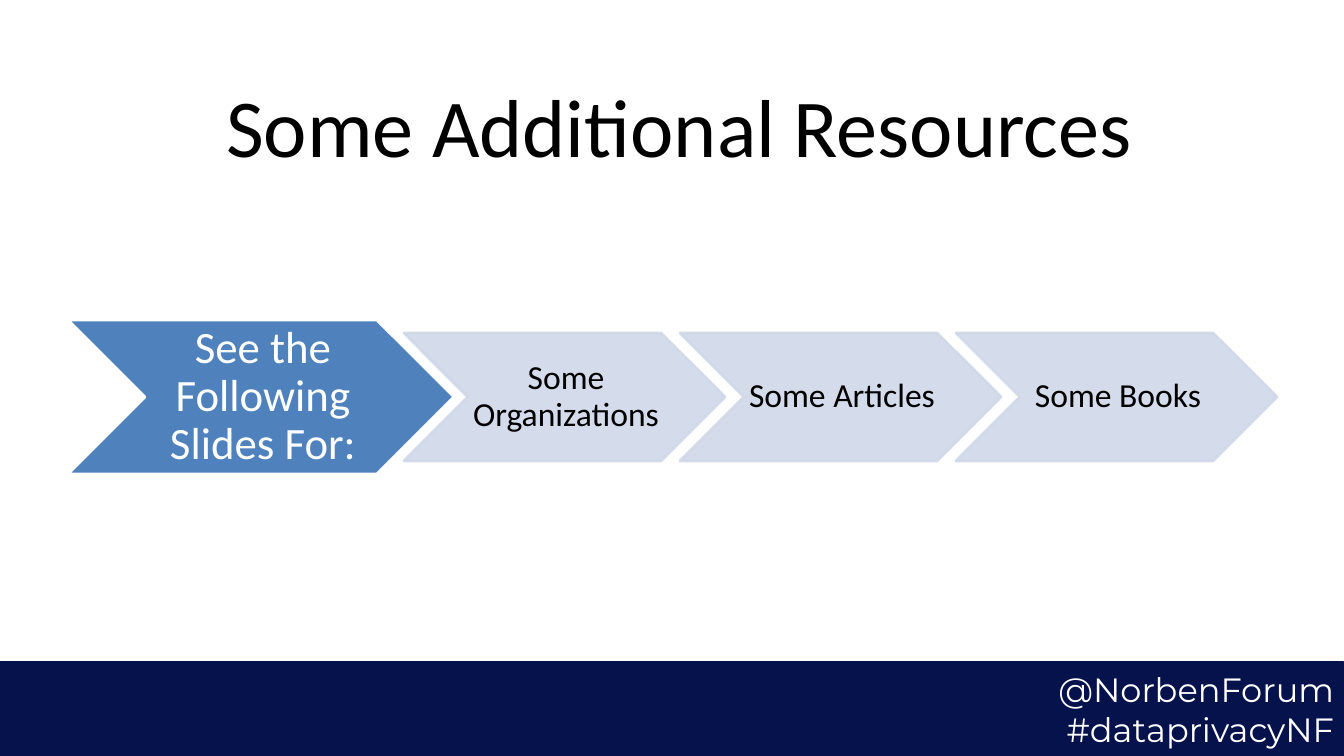
from lxml import etree
from pptx import Presentation
from pptx.dml.color import RGBColor
from pptx.enum.shapes import MSO_SHAPE
from pptx.enum.text import MSO_ANCHOR, MSO_AUTO_SIZE, PP_ALIGN
from pptx.oxml.ns import qn
from pptx.util import Emu, Pt

RECT, CHEVRON = MSO_SHAPE.RECTANGLE, MSO_SHAPE.CHEVRON
MIDDLE, NO_FIT = MSO_ANCHOR.MIDDLE, MSO_AUTO_SIZE.NONE
CENTER, RIGHT = PP_ALIGN.CENTER, PP_ALIGN.RIGHT

TITLE = "Some Additional Resources"
LEAD = "See the Following Slides For:"
STEPS = ["Some Organizations", "Some Articles", "Some Books"]
TAGS = ["@NorbenForum", "#dataprivacyNF"]

WIDE, HIGH = 1344, 756
TITLE_BOX = (14, 0, 1330, 249)
BAND_BOX = (0, 662, WIDE, HIGH - 662)
LEAD_BOX = (68, 320, 386, 154)
STEP_BOX = (404, 333, 321, 128)
PITCH = 276

NAVY, BLUE, PALE = "05124C", "4F81BD", "D0D8E8"
WHITE, BLACK = "FFFFFF", "000000"

TITLE_TEXT = {"size": 58.7, "name": "Calibri", "color": BLACK, "align": CENTER}
LEAD_TEXT = {"size": 32, "name": "Calibri", "color": WHITE, "align": CENTER,
             "spacing": 0.9, "inset": (4, 2, 0, 2)}
STEP_TEXT = {**LEAD_TEXT, "size": 24, "color": BLACK, "inset": (3, 2, 0, 2)}
TAG_TEXT = {"size": 24, "name": "Montserrat", "color": WHITE, "align": RIGHT}


def px(n):
    return Emu(round(n * 914400 / 100.8))


def rgb(code):
    return RGBColor.from_string(code)


def place(shape, box):
    for key, n in zip(("left", "top", "width", "height"), box):
        setattr(shape, key, px(n))


def write(shape, lines, look):
    frame = shape.text_frame
    inset = look.get("inset", (10, 5, 10, 5))
    form = {"word_wrap": True, "auto_size": NO_FIT, "vertical_anchor": MIDDLE}
    for side, n in zip(("left", "top", "right", "bottom"), inset):
        form["margin_" + side] = px(n)
    for key, value in form.items():
        setattr(frame, key, value)
    frame.text = "\n".join(lines)
    for para in frame.paragraphs:
        para.alignment = look["align"]
        para.line_spacing = look.get("spacing", 1.0)
        font = {"size": Pt(look["size"]), "name": look["name"], "bold": False}
        for key, value in font.items():
            setattr(para.font, key, value)
        para.font.color.rgb = rgb(look["color"])


def draw(slide, kind, box, fill, line, weight, lines, look, alpha=100):
    shape = slide.shapes.add_shape(kind, *map(px, box))
    shape.shadow.inherit = False
    shape.fill.solid()
    shape.fill.fore_color.rgb = rgb(fill)
    shape.line.color.rgb = rgb(line)
    shape.line.width = Pt(weight)
    if alpha < 100:
        for tint in shape.element.spPr.iter(qn("a:srgbClr")):
            etree.SubElement(tint, qn("a:alpha"), val=str(alpha * 1000))
    write(shape, lines, look)


def main():
    deck = Presentation()
    deck.slide_width, deck.slide_height = px(WIDE), px(HIGH)
    slide = deck.slides.add_slide(deck.slide_layouts[5])
    title = slide.shapes.title
    place(title, TITLE_BOX)
    write(title, [TITLE], TITLE_TEXT)
    draw(slide, RECT, BAND_BOX, NAVY, NAVY, 0.75, TAGS, TAG_TEXT)
    draw(slide, CHEVRON, LEAD_BOX, BLUE, WHITE, 2, [LEAD], LEAD_TEXT)
    left, top, wide, high = STEP_BOX
    for i, step in enumerate(STEPS):
        box = (left + i * PITCH, top, wide, high)
        draw(slide, CHEVRON, box, PALE, PALE, 2, [step], STEP_TEXT, 90)
    deck.save("out.pptx")


if __name__ == "__main__":
    main()
